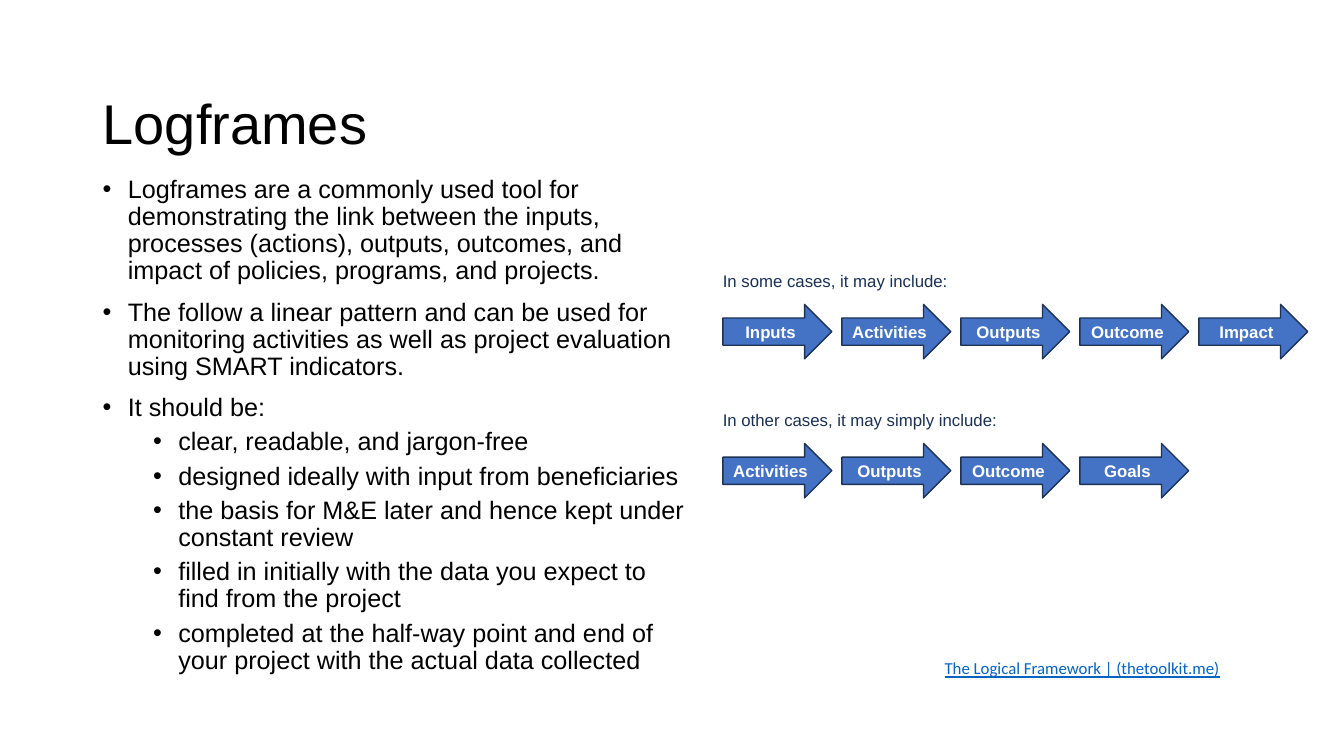
from pptx import Presentation
from pptx.dml.color import RGBColor
from pptx.enum.shapes import MSO_SHAPE as Shape
from pptx.enum.text import MSO_ANCHOR as Anchor, PP_ALIGN as Align
from pptx.oxml.xmlchemy import OxmlElement as Element
from pptx.util import Inches, Pt

COLORS = {"text": "000000", "note": "1A3055", "link": "0563C1",
          "arrow": "4472C4", "edge": "1E3256", "label": "FFFFFF"}

# Grid of the arrow chains, in inches
LEFT, TOP = 7.17, 3.02
COL, ROW = 1.18, 1.38
WIDE, HIGH = 1.08, 0.54

POINTS = [
    (0, "Logframes are a commonly used tool for demonstrating the link between the "
        "inputs, processes (actions), outputs, outcomes, and impact of policies, "
        "programs, and projects."),
    (0, "The follow a linear pattern and can be used for monitoring activities as well "
        "as project evaluation using SMART indicators."),
    (0, "It should be:"),
    (1, "clear, readable, and jargon-free"),
    (1, "designed ideally with input from beneficiaries"),
    (1, "the basis for M&E later and hence kept under constant review"),
    (1, "filled in initially with the data you expect to find from the project"),
    (1, "completed at the half-way point and end of your project with the actual "
        "data collected"),
]
CHAINS = [
    ("In some cases, it may include:",
     ["Inputs", "Activities", "Outputs", "Outcome", "Impact"]),
    ("In other cases, it may simply include:",
     ["Activities", "Outputs", "Outcome", "Goals"]),
]


def color(name):
    return RGBColor.from_string(COLORS[name])


def style(para, size, tint, face="Arial", bold=False, under=False):
    for run in para.runs:
        font = run.font
        font.name, font.size = face, Pt(size)
        font.bold, font.underline = bold, under
        font.color.rgb = color(tint)


def add_box(slide, x, y, w, h, wrap=True):
    box = slide.shapes.add_textbox(*map(Inches, (x, y, w, h)))
    box.text_frame.word_wrap = wrap
    return box.text_frame


def add_line(slide, text, x, y, w, h, size, tint, wrap=True, **look):
    """Add a text box that holds one paragraph."""
    frame = add_box(slide, x, y, w, h, wrap)
    frame.text = text
    style(frame.paragraphs[0], size, tint, **look)
    return frame


def add_bullet(para, level):
    props = para._p.get_or_add_pPr()
    props.set("marL", str(Inches(0.25 + 0.5 * level)))
    props.set("indent", str(Inches(-0.25)))
    font = Element("a:buFont")
    font.set("typeface", "Arial")
    mark = Element("a:buChar")
    mark.set("char", "•")
    props.extend([font, mark])


def add_list(slide, points, x, y, w, h):
    frame = add_box(slide, x, y, w, h)
    for i, (level, text) in enumerate(points):
        para = frame.add_paragraph() if i else frame.paragraphs[0]
        para.text, para.level = text, level
        add_bullet(para, level)
        para.line_spacing = 0.9
        para.space_before = Pt((5 if level else 10) if i else 0)
        style(para, 18, "text")


def add_arrow(slide, text, x, y):
    arrow = slide.shapes.add_shape(
        Shape.RIGHT_ARROW, *map(Inches, (x, y, WIDE, HIGH)))
    arrow.shadow.inherit = False
    arrow.fill.solid()
    arrow.fill.fore_color.rgb = color("arrow")
    arrow.line.color.rgb = color("edge")
    arrow.line.width = Pt(1)
    frame = arrow.text_frame
    frame.margin_left = frame.margin_right = 0
    frame.margin_top = frame.margin_bottom = 0
    frame.vertical_anchor = Anchor.MIDDLE
    frame.word_wrap = False
    frame.text = text
    para = frame.paragraphs[0]
    para.alignment = Align.CENTER
    style(para, 12, "label", bold=True)


def add_chain(slide, row, note, steps):
    y = TOP + row * ROW
    add_line(slide, note, LEFT - 0.1, y - 0.38, 2.95, 0.3, 12, "note", wrap=False)
    for col, step in enumerate(steps):
        add_arrow(slide, step, LEFT + col * COL, y)


def main():
    deck = Presentation()
    deck.slide_width, deck.slide_height = Inches(13.33), Inches(7.5)
    slide = deck.slides.add_slide(deck.slide_layouts[6])
    title = add_line(slide, "Logframes", 0.92, 0.4, 11.03, 1.71, 40, "text")
    title.vertical_anchor = Anchor.MIDDLE
    title.paragraphs[0].line_spacing = 0.9
    add_list(slide, POINTS, 0.92, 1.7, 6, 4.78)
    add_line(slide, "The Logical Framework | (thetoolkit.me)", 9.27, 6.48, 3.84, 0.3,
             12, "link", face="Calibri", under=True)
    for row, (note, steps) in enumerate(CHAINS):
        add_chain(slide, row, note, steps)
    deck.save("out.pptx")


if __name__ == "__main__":
    main()
